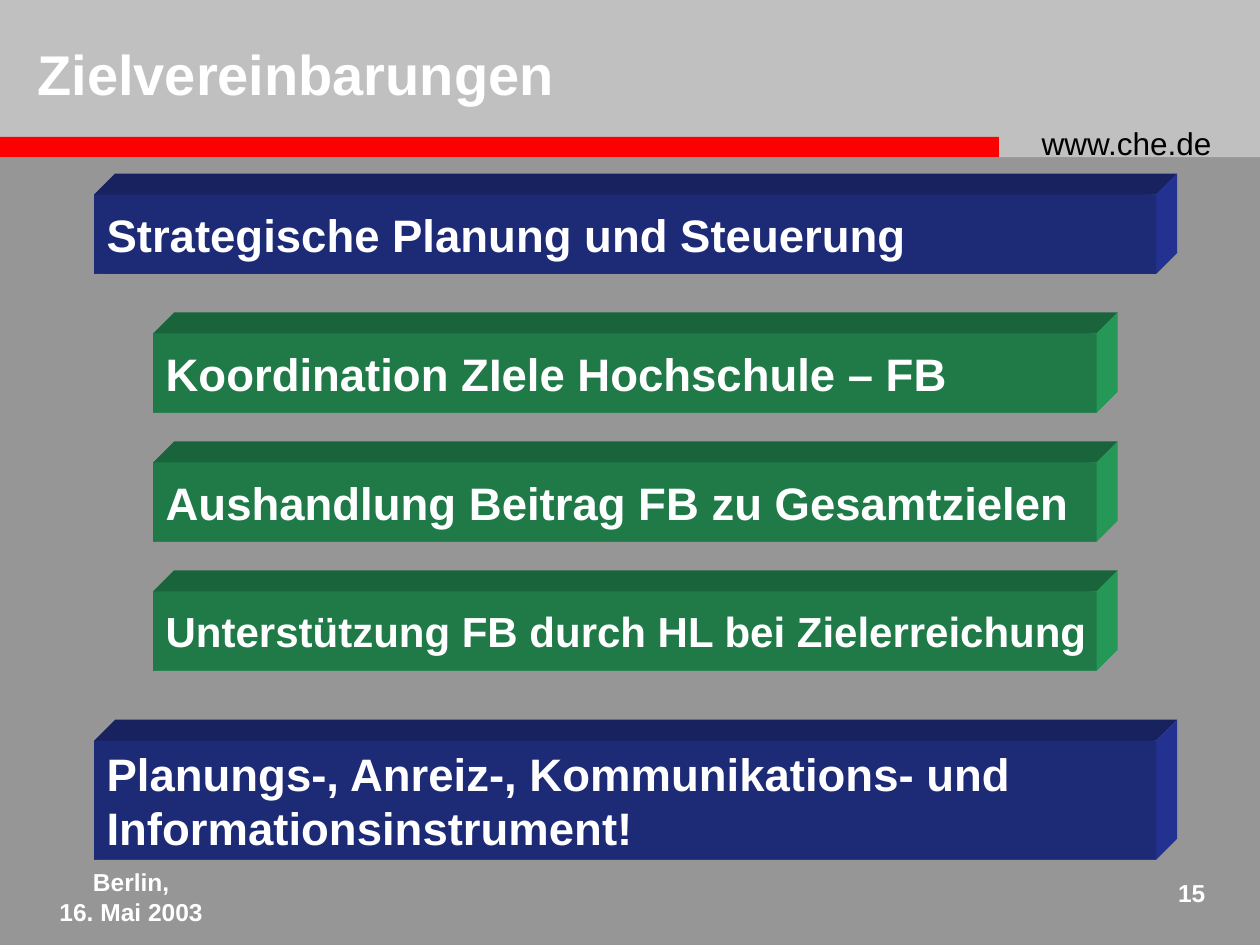
from pptx import Presentation
from pptx.dml.color import RGBColor
from pptx.enum.shapes import MSO_SHAPE
from pptx.enum.text import MSO_ANCHOR, PP_ALIGN
from pptx.util import Cm, Pt

TITLE = "Zielvereinbarungen"
WEBSITE = "www.che.de"
PLACE_AND_DATE = ["Berlin,", "16. Mai 2003"]
PAGE = "15"
# lines, level, top (cm), height (cm), text size (pt)
GOAL_TOP, GOAL_STEP = 6.72, 2.6
GOALS = [
    ("Koordination ZIele Hochschule – FB", 26),
    ("Aushandlung Beitrag FB zu Gesamtzielen", 26),
    ("Unterstützung FB durch HL bei Zielerreichung", 24),
]
BARS = [
    (["Strategische Planung und Steuerung"], "frame", 3.92, 1.6, 26),
    *[([goal], "goal", GOAL_TOP + i * GOAL_STEP, 1.6, size)
      for i, (goal, size) in enumerate(GOALS)],
    (["Planungs-, Anreiz-, Kommunikations- und", "Informationsinstrument!"],
     "frame", 14.93, 2.4, 26),
]
SPANS = {"frame": (1.9, 21.41), "goal": (3.09, 19.02)}  # left, width (cm)
DEPTH = 0.42

COLORS = {
    "background": "969696", "header": "C0C0C0", "stripe": "FF0000",
    "white": "FFFFFF", "black": "000000",
    "frame front": "1D2A76", "frame top": "18225F", "frame side": "233290",
    "goal front": "1F7A48", "goal top": "1A643B", "goal side": "259757",
}


def color(name):
    return RGBColor.from_string(COLORS[name])


def paint(shape, name):
    shape.shadow.inherit = False
    shape.fill.solid()
    shape.fill.fore_color.rgb = color(name)
    shape.line.fill.background()


def add_block(slide, left, top, width, height, name):
    block = slide.shapes.add_shape(
        MSO_SHAPE.RECTANGLE, Cm(left), Cm(top), Cm(width), Cm(height))
    paint(block, name)
    return block


def add_face(slide, points, name):
    corners = [(Cm(x), Cm(y)) for x, y in points]
    builder = slide.shapes.build_freeform(*corners[0])
    builder.add_line_segments(corners[1:], close=True)
    paint(builder.convert_to_shape(), name)


def write(frame, lines, size, name="white", bold=True, align=PP_ALIGN.LEFT):
    frame.text = "\n".join(lines)
    for paragraph in frame.paragraphs:
        paragraph.alignment = align
        paragraph.font.name = "Arial"
        paragraph.font.size = Pt(size)
        paragraph.font.bold = bold
        paragraph.font.color.rgb = color(name)


def add_label(slide, left, top, width, height, lines, size, **style):
    label = slide.shapes.add_textbox(Cm(left), Cm(top), Cm(width), Cm(height))
    label.text_frame.word_wrap = True
    write(label.text_frame, lines, size, **style)


def add_bar(slide, lines, level, top, height, size):
    """Front face with text; the top and right faces reach under it to hide seams."""
    left, width = SPANS[level]
    right, bottom = left + width, top + height
    back_right, back_top = right + DEPTH, top - DEPTH
    add_face(slide, [(left, top), (left + DEPTH, back_top), (back_right, back_top),
                     (right, top), (left, bottom)], f"{level} top")
    add_face(slide, [(right, top), (back_right, back_top), (back_right, bottom - DEPTH),
                     (right, bottom), (left, bottom)], f"{level} side")
    frame = add_block(slide, left, top, width, height, f"{level} front").text_frame
    frame.word_wrap = False
    frame.vertical_anchor = MSO_ANCHOR.MIDDLE
    write(frame, lines, size)


def main():
    prs = Presentation()
    prs.slide_width, prs.slide_height = Cm(25.4), Cm(19.05)
    slide = prs.slides.add_slide(prs.slide_layouts[5])
    slide.background.fill.solid()
    slide.background.fill.fore_color.rgb = color("background")

    add_block(slide, 0, 0, 25.4, 3.17, "header")
    add_block(slide, 0, 2.76, 20.14, 0.41, "stripe")
    add_label(slide, 20.75, 2.37, 4.45, 1.02, [WEBSITE], 18, name="black", bold=False)
    add_label(slide, 0, 17.36, 5.29, 1.27, PLACE_AND_DATE, 14, align=PP_ALIGN.CENTER)
    add_label(slide, 23.07, 17.58, 1.48, 1.07, [PAGE], 14, align=PP_ALIGN.RIGHT)

    title = slide.shapes.title
    title.left, title.top, title.width, title.height = Cm(0.5), Cm(0.53), Cm(19), Cm(1.9)
    title.text_frame.vertical_anchor = MSO_ANCHOR.MIDDLE
    write(title.text_frame, [TITLE], 32)
    slide.shapes._spTree.append(title._element)  # in front of the header

    for bar in BARS:
        add_bar(slide, *bar)
    prs.save("out.pptx")


if __name__ == "__main__":
    main()
